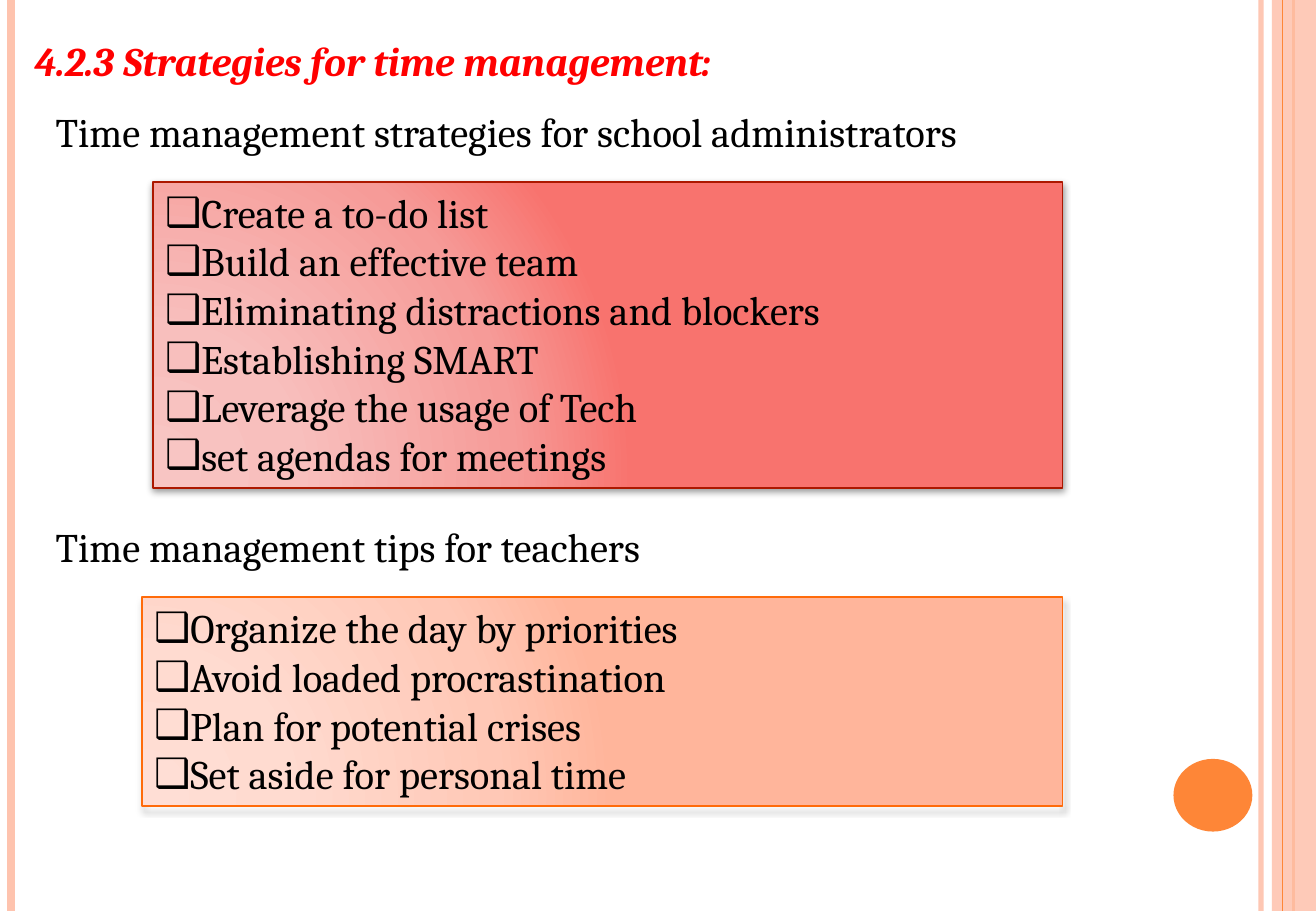
from lxml.etree import SubElement
from pptx import Presentation
from pptx.dml.color import RGBColor
from pptx.enum.shapes import MSO_CONNECTOR, MSO_SHAPE
from pptx.enum.text import MSO_ANCHOR, MSO_AUTO_SIZE, PP_ALIGN
from pptx.oxml.ns import qn
from pptx.util import Cm, Pt

COLORS = {
    "black": "000000",
    "red": "FF0000",
    "peach": "FEC3AE",
    "orange": "FE8637",
    "red_edge": "AC1800",
    "orange_edge": "FF6B0A",
}
RED_STOPS = {0: "F8C5C3", 30: "F8BFBD", 75: "F69B98", 100: "F8736E"}
ORANGE_STOPS = {0: "FFDED5", 30: "FFDBD0", 75: "FFC8B6", 100: "FFB59B"}
ADMIN_STRATEGIES = [
    "Create a to-do list",
    "Build an effective team",
    "Eliminating distractions and blockers",
    "Establishing SMART",
    "Leverage the usage of Tech",
    "set agendas for meetings",
]
TEACHER_TIPS = [
    "Organize the day by priorities",
    "Avoid loaded procrastination",
    "Plan for potential crises",
    "Set aside for personal time",
]


def rgb(name):
    return RGBColor.from_string(COLORS[name])


def node(parent, tag, **attrs):
    return SubElement(parent, qn(tag), {k: str(v) for k, v in attrs.items()})


class SlideBuilder:
    font = "Cambria"
    size = Pt(24)

    def __init__(self, prs):
        self.height = prs.slide_height
        self.s = prs.slides.add_slide(prs.slide_layouts.get_by_name("Comparison"))

    def set_alpha(self, sp, percent):
        for clr in sp._element.iter(qn("a:srgbClr")):
            node(clr, "a:alpha", val=percent * 1000)

    def stripe(self, x, color, width, alpha=100):
        line = self.s.shapes.add_connector(
            MSO_CONNECTOR.STRAIGHT, Cm(x), 0, Cm(x), self.height)
        line.line.color.rgb = rgb(color)
        line.line.width = Pt(width)
        node(line._element.spPr, "a:effectLst")
        if alpha < 100:
            self.set_alpha(line, alpha)

    def shape(self, kind, x, y, w, h, color, alpha=100):
        sp = self.s.shapes.add_shape(kind, Cm(x), Cm(y), Cm(w), Cm(h))
        sp.shadow.inherit = False
        sp.fill.solid()
        sp.fill.fore_color.rgb = rgb(color)
        sp.line.fill.background()
        if alpha < 100:
            self.set_alpha(sp, alpha)

    def text(self, idx, box, lines, color="black", bold=False, align=PP_ALIGN.LEFT):
        sp = self.s.placeholders[idx]
        sp.left, sp.top, sp.width, sp.height = (Cm(v) for v in box)
        tf = sp.text_frame
        tf.text = "\n".join(lines)
        tf.word_wrap = True
        tf.auto_size = MSO_AUTO_SIZE.NONE
        tf.vertical_anchor = MSO_ANCHOR.TOP
        for p in tf.paragraphs:
            p.alignment = align
            p.space_before = Pt(0)
            p.font.name = self.font
            p.font.size = self.size
            p.font.bold = p.font.italic = bold
            p.font.color.rgb = rgb(color)
        return sp

    def gradient(self, sp, stops):
        grad = node(sp._element.spPr, "a:gradFill", rotWithShape=1)
        gs_list = node(grad, "a:gsLst")
        for pos, color in stops.items():
            gs = node(gs_list, "a:gs", pos=pos * 1000)
            node(gs, "a:srgbClr", val=color)
        circle = node(grad, "a:path", path="circle")
        node(circle, "a:fillToRect", l=5000, t=100000, r=120000, b=10000)

    def drop_shadow(self, sp):
        effects = node(sp._element.spPr, "a:effectLst")
        shadow = node(effects, "a:outerShdw", blurRad=Pt(4), dist=Pt(2),
                      dir=5400000, rotWithShape=0)
        clr = node(shadow, "a:srgbClr", val=COLORS["black"])
        node(clr, "a:alpha", val=40000)

    def checklist(self, idx, box, items, stops, edge):
        sp = self.text(idx, box, items)
        for p in sp.text_frame.paragraphs:
            pPr = p._p.get_or_add_pPr()
            pPr.set("marL", "0")
            pPr.set("indent", "0")
            bullet = pPr.makeelement(qn("a:buChar"), {"char": "❑"})
            pPr.find(qn("a:defRPr")).addprevious(bullet)
        self.gradient(sp, stops)
        sp.line.color.rgb = rgb(edge)
        sp.line.width = Pt(1)
        self.drop_shadow(sp)


def main():
    prs = Presentation()
    prs.slide_width, prs.slide_height = Cm(27.52), Cm(19.05)
    b = SlideBuilder(prs)

    b.stripe(26.37, "peach", 3, 93)
    b.stripe(0.23, "peach", 4.5)
    b.stripe(27.05, "orange", 1.5)
    b.shape(MSO_SHAPE.RECTANGLE, 26.6, 0, 0.92, 19.05, "peach", 87)
    b.stripe(26.82, "orange", 0.75)
    b.shape(MSO_SHAPE.OVAL, 24.54, 15.87, 1.65, 1.52, "orange")

    b.text(0, (0.46, 0.63, 24.08, 1.28),
           ["4.2.3 Strategies for time management:"], "red", True)
    b.text(1, (0.91, 2.11, 24.08, 1.28),
           ["Time management strategies for school administrators"],
           align=PP_ALIGN.JUSTIFY)
    b.checklist(2, (3.2, 3.8, 19.02, 6.4), ADMIN_STRATEGIES, RED_STOPS, "red_edge")
    b.text(3, (0.91, 10.79, 21.79, 1.28), ["Time management tips for teachers"])
    b.checklist(4, (2.97, 12.49, 19.25, 4.37), TEACHER_TIPS, ORANGE_STOPS, "orange_edge")

    prs.save("out.pptx")


if __name__ == "__main__":
    main()
